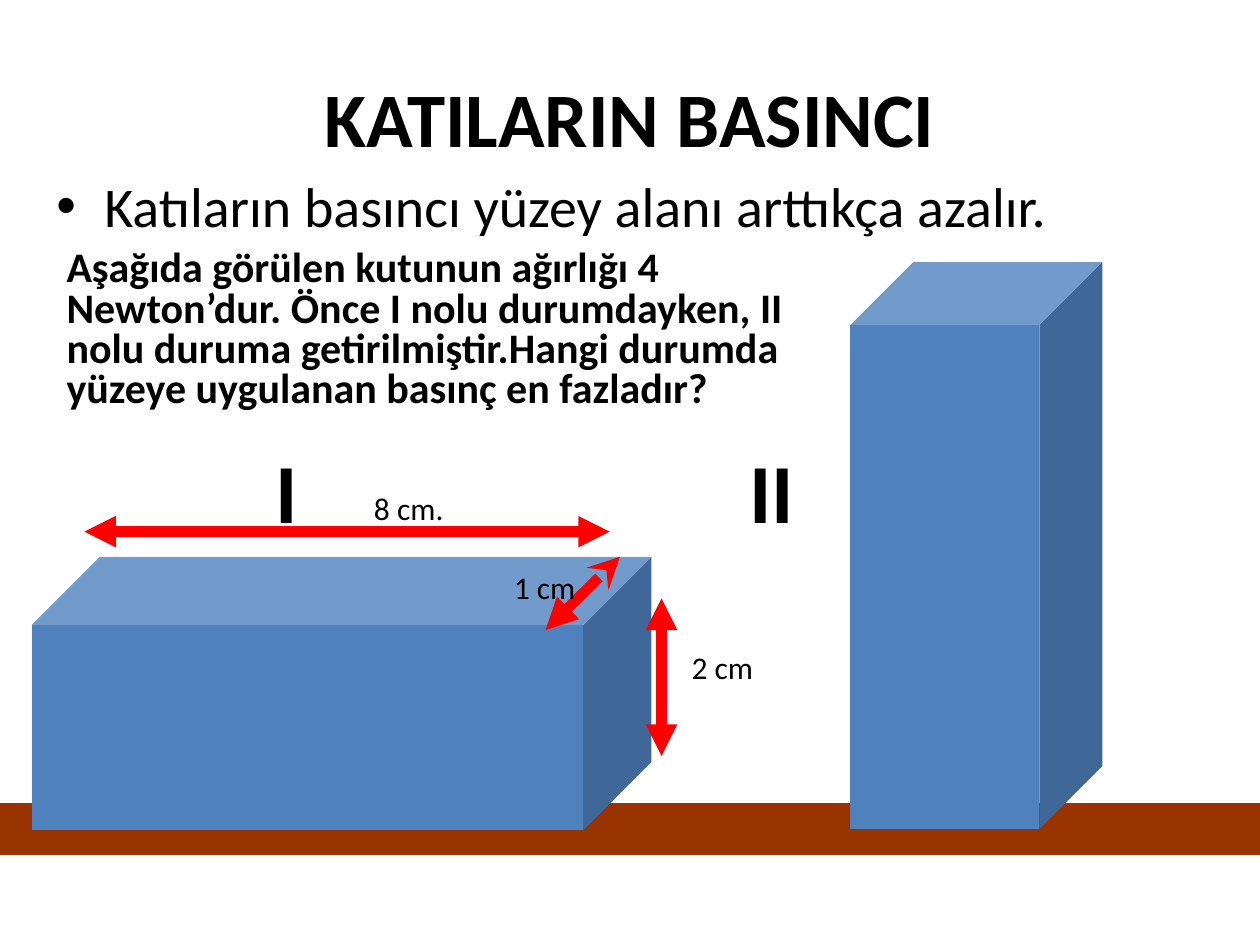
from typing import NamedTuple

from lxml.etree import SubElement
from pptx import Presentation
from pptx.dml.color import RGBColor
from pptx.enum.shapes import MSO_CONNECTOR, MSO_SHAPE
from pptx.enum.text import MSO_ANCHOR, PP_ALIGN
from pptx.oxml.ns import qn
from pptx.util import Inches, Pt

BLACK = RGBColor(0x00, 0x00, 0x00)
BLUE = RGBColor(0x4F, 0x81, 0xBD)
RED = RGBColor(0xFF, 0x00, 0x00)
BROWN = RGBColor(0x99, 0x33, 0x00)
FONT = "Calibri"


class Box(NamedTuple):
    left: float
    top: float
    width: float
    height: float


class Caption(NamedTuple):
    text: str
    box: Box
    size: int
    bold: bool = False
    line_spacing: float = 1.0


class Line(NamedTuple):
    start: tuple[float, float]
    end: tuple[float, float]
    color: RGBColor = RED
    width: int = 6
    head: str | None = "triangle"
    tail: str | None = "triangle"


TITLE = Caption("KATILARIN BASINCI", Box(0.5, 0.3, 9, 1.25), 44, True)
RULE = Caption("Katıların basıncı yüzey alanı arttıkça azalır.",
               Box(0.35, 1.31, 9, 4.95), 32)
QUESTION = Caption(
    "Aşağıda görülen kutunun ağırlığı 4 Newton’dur. Önce I nolu durumdayken, "
    "II nolu duruma getirilmiştir.Hangi durumda yüzeye uygulanan basınç en fazladır?",
    Box(0.43, 1.94, 6.16, 1.4), 24, True, 0.8)
CASE_NUMBERS = Caption("I\tII", Box(2.09, 3.44, 4.72, 0.91), 48, True)
CASE_TAB = Inches(3.76)
DIMENSIONS = [
    Caption("8 cm.", Box(2.87, 3.83, 2, 0.5), 18),
    Caption("1 cm", Box(3.98, 4.46, 1, 0.5), 18),
    Caption("2 cm", Box(5.39, 5.09, 0.92, 0.5), 18),
]
GROUND = Line((0, 6.58), (10, 6.58), BROWN, 30, None, None)
CUBES = [Box(0.25, 4.42, 4.92, 2.17), Box(6.75, 2.08, 2, 4.5)]
ARROWS = [
    Line((0.67, 4.22), (4.84, 4.22)),
    Line((4.92, 4.42), (4.33, 5), head="stealth"),
    Line((5.25, 4.75), (5.25, 6)),
]


def write(shape, caption: Caption):
    """Fill a shape with the caption and return its paragraph."""
    frame = shape.text_frame
    frame.word_wrap = True
    paragraph = frame.paragraphs[0]
    paragraph.line_spacing = caption.line_spacing
    run = paragraph.add_run()
    run.text = caption.text
    formats = {"name": FONT, "size": Pt(caption.size), "bold": caption.bold}
    for attribute, value in formats.items():
        setattr(run.font, attribute, value)
    run.font.color.rgb = BLACK
    return paragraph


def add_caption(slide, caption: Caption):
    return write(slide.shapes.add_textbox(*map(Inches, caption.box)), caption)


def add_title(slide, caption: Caption) -> None:
    title = slide.shapes.title
    for attribute, value in caption.box._asdict().items():
        setattr(title, attribute, Inches(value))
    write(title, caption).alignment = PP_ALIGN.CENTER
    title.text_frame.vertical_anchor = MSO_ANCHOR.MIDDLE


def add_bullet(paragraph) -> None:
    properties = paragraph._p.get_or_add_pPr()
    indent = Inches(0.38)
    properties.set("marL", str(indent))
    properties.set("indent", str(-indent))
    SubElement(properties, qn("a:buFont"), typeface="Arial")
    SubElement(properties, qn("a:buChar"), char="•")


def add_tab_stop(paragraph, position: int) -> None:
    tabs = SubElement(paragraph._p.get_or_add_pPr(), qn("a:tabLst"))
    SubElement(tabs, qn("a:tab"), pos=str(position), algn="l")


def add_line(slide, line: Line) -> None:
    connector = slide.shapes.add_connector(
        MSO_CONNECTOR.STRAIGHT, *map(Inches, line.start + line.end))
    connector.line.color.rgb = line.color
    connector.line.width = Pt(line.width)
    properties = connector._element.spPr
    outline = properties.find(qn("a:ln"))
    for tag, kind in (("a:headEnd", line.head), ("a:tailEnd", line.tail)):
        if kind:
            SubElement(outline, qn(tag), type=kind)
    SubElement(properties, qn("a:effectLst"))


def add_cube(slide, box: Box) -> None:
    cube = slide.shapes.add_shape(MSO_SHAPE.CUBE, *map(Inches, box))
    cube.adjustments[0] = 0.25
    cube.fill.solid()
    cube.fill.fore_color.rgb = BLUE
    cube.line.fill.background()
    cube.shadow.inherit = False


def main() -> None:
    deck = Presentation()
    deck.slide_width, deck.slide_height = Inches(10), Inches(7.5)
    slide = deck.slides.add_slide(deck.slide_layouts.get_by_name("Title Only"))

    add_title(slide, TITLE)
    add_bullet(add_caption(slide, RULE))
    add_caption(slide, QUESTION)
    add_line(slide, GROUND)
    for cube in CUBES:
        add_cube(slide, cube)
    add_tab_stop(add_caption(slide, CASE_NUMBERS), CASE_TAB)
    for arrow in ARROWS:
        add_line(slide, arrow)
    for dimension in DIMENSIONS:
        add_caption(slide, dimension)

    deck.save("out.pptx")


if __name__ == "__main__":
    main()
